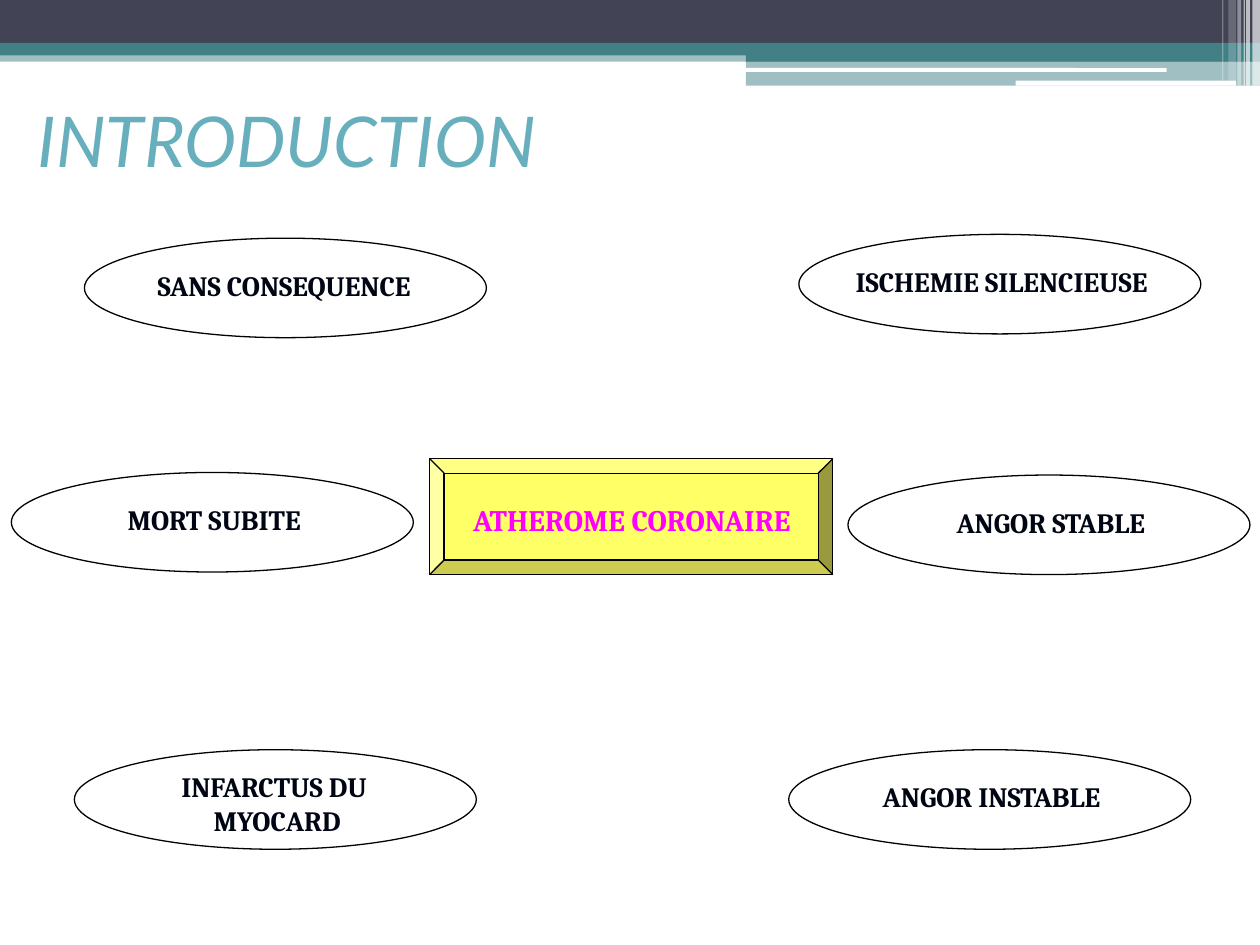
from typing import NamedTuple

import pptx
import pptx.dml.color
import pptx.enum.shapes
import pptx.enum.text
import pptx.oxml.ns
import pptx.util
from lxml import etree

Inches = pptx.util.Inches
RGBColor = pptx.dml.color.RGBColor
Shape = pptx.enum.shapes.MSO_SHAPE
Align = pptx.enum.text.PP_ALIGN
Anchor = pptx.enum.text.MSO_ANCHOR

WHITE = RGBColor(0xFF, 0xFF, 0xFF)
BLACK = RGBColor(0x00, 0x00, 0x00)
SLATE = RGBColor(0x42, 0x44, 0x56)
TEAL = RGBColor(0x43, 0x80, 0x86)
SKY = RGBColor(0x67, 0xAF, 0xBD)
INK = RGBColor(0x00, 0x05, 0x14)
YELLOW = RGBColor(0xFF, 0xFF, 0x66)
MAGENTA = RGBColor(0xFF, 0x00, 0xFF)

OVAL_WIDTH, OVAL_HEIGHT = 3.19, 0.79
LABEL_WIDTH, LABEL_HEIGHT = 2.84, 0.49
LABEL_INDENT = 0.19


class Band(NamedTuple):
    left: float
    top: float
    width: float
    height: float
    color: RGBColor
    opacity: int = 100
    kind: Shape = Shape.RECTANGLE


class Outcome(NamedTuple):
    left: float
    top: float
    text: str
    label_drop: float = 0.19


BANDS = [
    Band(0, 0.4, 10, 0.09, TEAL, 50),
    Band(0, 0, 10, 0.34, SLATE),
    Band(0, 0.34, 10, 0.1, TEAL),
    Band(5.92, 0.39, 4.08, 0.1, TEAL),
    Band(5.92, 0.48, 4.08, 0.2, TEAL, 50),
    Band(5.91, 0.54, 3.35, 0.03, WHITE, kind=Shape.ROUNDED_RECTANGLE),
    Band(8.06, 0.64, 1.75, 0.04, WHITE, kind=Shape.ROUNDED_RECTANGLE),
    Band(9.94, 0, 0.06, 0.68, WHITE, 65),
    Band(9.89, 0, 0.03, 0.68, WHITE, 65),
    Band(9.87, 0, 0.01, 0.68, WHITE, 60),
    Band(9.82, 0, 0.03, 0.68, WHITE, 40),
    Band(9.75, 0, 0.06, 0.64, WHITE, 20),
    Band(9.7, 0, 0.01, 0.64, WHITE, 30),
]

OUTCOMES = [
    Outcome(6.34, 1.86, "ISCHEMIE SILENCIEUSE"),
    Outcome(0.67, 1.89, "SANS CONSEQUENCE "),
    Outcome(0.09, 3.75, "MORT SUBITE"),
    Outcome(0.59, 5.95, "INFARCTUS DU \nMYOCARD", label_drop=0.11),
    Outcome(6.26, 5.95, "ANGOR INSTABLE"),
    Outcome(6.73, 3.77, "ANGOR STABLE"),
]


def add_filled(page, kind: Shape, left: float, top: float, width: float, height: float,
               color: RGBColor, outlined: bool = False):
    shape = page.shapes.add_shape(
        kind, Inches(left), Inches(top), Inches(width), Inches(height))
    shape.shadow.inherit = False
    shape.fill.solid()
    shape.fill.fore_color.rgb = color
    if outlined:
        shape.line.color.rgb = BLACK
        shape.line.width = pptx.util.Pt(0.75)
    else:
        shape.line.fill.background()
    return shape


def add_text(page, text: str, left: float, top: float, width: float, height: float, *,
             size: float, color: RGBColor, font: str = "Cambria", bold: bool = False,
             italic: bool = False, align: Align = Align.CENTER,
             anchor: Anchor = Anchor.TOP, wrap: bool = False) -> None:
    box = page.shapes.add_textbox(
        Inches(left), Inches(top), Inches(width), Inches(height))
    frame = box.text_frame
    frame.word_wrap = wrap
    frame.vertical_anchor = anchor
    frame.text = text
    for para in frame.paragraphs:
        para.alignment = align
        for span in para.runs:
            span.font.name = font
            span.font.size = pptx.util.Pt(size)
            span.font.bold = bold
            span.font.italic = italic
            span.font.color.rgb = color


def draw_band(page, band: Band) -> None:
    shape = add_filled(page, band.kind, band.left, band.top, band.width, band.height,
                       band.color)
    if band.opacity < 100:
        qn = pptx.oxml.ns.qn
        tint = shape.fill._xPr.find(qn("a:solidFill")).find(qn("a:srgbClr"))
        etree.SubElement(tint, qn("a:alpha"), val=str(band.opacity * 1000))


def draw_outcome(page, outcome: Outcome) -> None:
    add_filled(page, Shape.OVAL, outcome.left, outcome.top, OVAL_WIDTH, OVAL_HEIGHT,
               WHITE, outlined=True)
    add_text(page, outcome.text, outcome.left + LABEL_INDENT,
             outcome.top + outcome.label_drop, LABEL_WIDTH, LABEL_HEIGHT,
             size=16, color=INK, bold=True)


def main() -> None:
    deck = pptx.Presentation()
    deck.slide_width, deck.slide_height = Inches(10), Inches(7.5)
    page = deck.slides.add_slide(deck.slide_layouts[6])

    for band in BANDS:
        draw_band(page, band)
    add_text(page, "INTRODUCTION", 0.2, 0.52, 9, 1.17, size=40, color=SKY, font="Lato",
             italic=True, align=Align.LEFT, anchor=Anchor.MIDDLE, wrap=True)
    for outcome in OUTCOMES:
        draw_outcome(page, outcome)
    add_filled(page, Shape.BEVEL, 3.41, 3.64, 3.2, 0.92, YELLOW, outlined=True)
    add_text(page, "ATHEROME CORONAIRE", 3.47, 3.93, 3.09, 0.5,
             size=17, color=MAGENTA, bold=True)

    deck.save("out.pptx")


if __name__ == "__main__":
    main()
